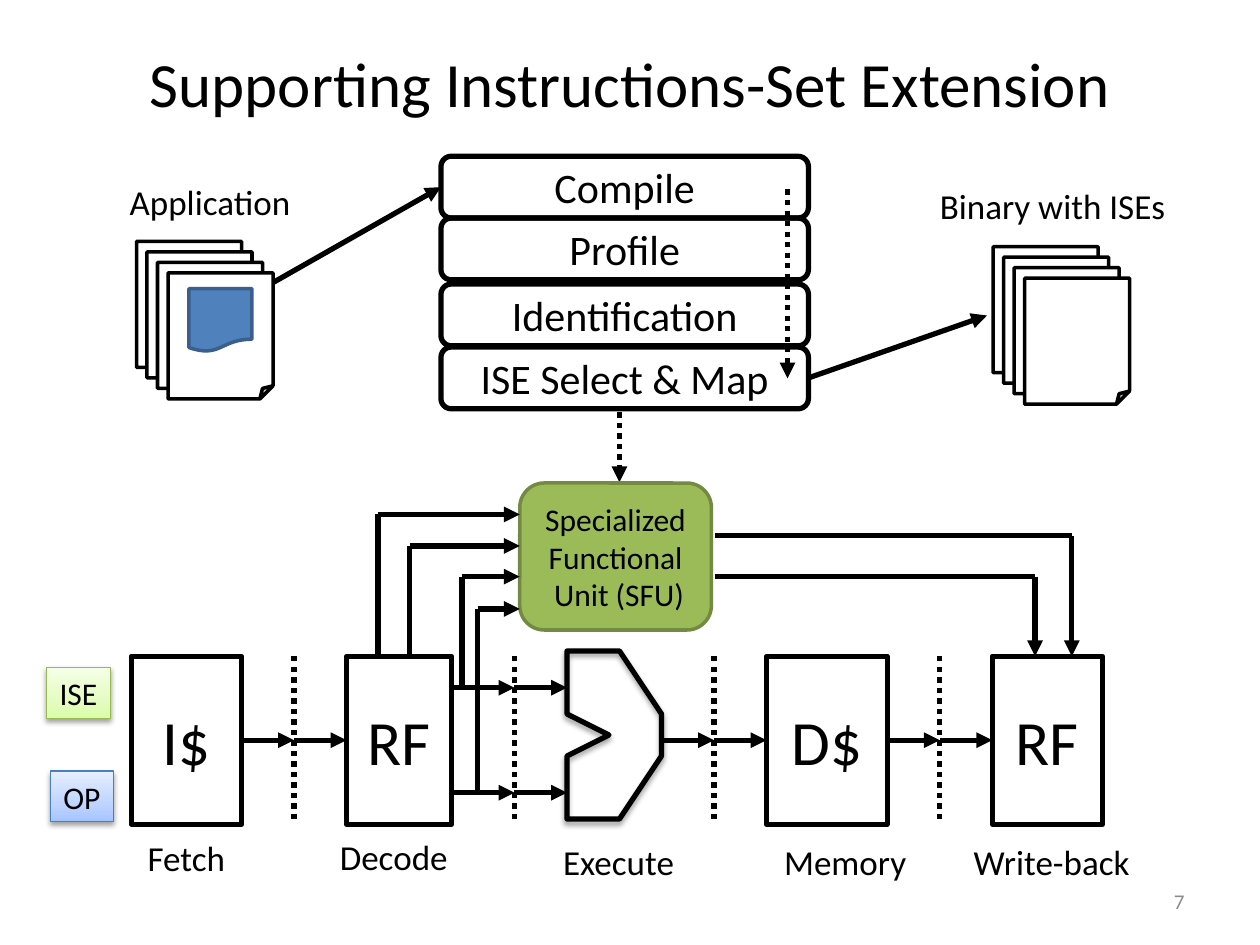
import copy

import lxml.etree
import pptx
import pptx.dml.color
import pptx.enum.dml
import pptx.enum.shapes
import pptx.enum.text
import pptx.oxml.ns
import pptx.util

Pt = pptx.util.Pt
RGBColor = pptx.dml.color.RGBColor
SHAPE = pptx.enum.shapes.MSO_SHAPE
ALIGN = pptx.enum.text.PP_ALIGN
ANCHOR = pptx.enum.text.MSO_ANCHOR
qn = pptx.oxml.ns.qn

FONT = "Calibri"
BLACK = RGBColor(0x00, 0x00, 0x00)
WHITE = RGBColor(0xFF, 0xFF, 0xFF)
GRAY = RGBColor(0x8C, 0x8C, 0x8C)
GREEN = RGBColor(0x9B, 0xBB, 0x59)
DARK_GREEN = RGBColor(0x73, 0x8A, 0x42)
BLUE = RGBColor(0x4F, 0x81, 0xBD)
DARK_BLUE = RGBColor(0x3A, 0x5F, 0x8C)
TAG_GREEN_LINE = RGBColor(0x98, 0xB9, 0x55)
TAG_GREENS = [RGBColor(0xDA, 0xFD, 0xA7), RGBColor(0xE4, 0xFC, 0xC2), RGBColor(0xF5, 0xFF, 0xE7)]
TAG_BLUE_LINE = RGBColor(0x4B, 0x7E, 0xBC)
TAG_BLUES = [RGBColor(0xA4, 0xC4, 0xFF), RGBColor(0xBF, 0xD4, 0xFF), RGBColor(0xE6, 0xEE, 0xFF)]


def write_text(shape, text, size, color=BLACK, align=ALIGN.CENTER, anchor=ANCHOR.MIDDLE, inset=0):
    frame = shape.text_frame
    frame.text = text
    frame.word_wrap = True
    frame.vertical_anchor = anchor
    frame.margin_left = frame.margin_right = Pt(inset)
    frame.margin_top = frame.margin_bottom = Pt(3.6)
    for paragraph in frame.paragraphs:
        paragraph.alignment = align
        for run in paragraph.runs:
            run.font.name = FONT
            run.font.size = Pt(size)
            run.font.color.rgb = color


def add_label(slide, box, text, size, **style):
    label = slide.shapes.add_textbox(*map(Pt, box))
    write_text(label, text, size, **style)


def format_outline(shape, fill, line, width):
    shape.shadow.inherit = False
    if fill is None:
        shape.fill.background()
    else:
        shape.fill.solid()
        shape.fill.fore_color.rgb = fill
    shape.line.color.rgb = line
    shape.line.width = Pt(width)


def add_box(slide, kind, box, fill=None, line=BLACK, width=3):
    shape = slide.shapes.add_shape(kind, *map(Pt, box))
    format_outline(shape, fill, line, width)
    return shape


def add_line(slide, start, end, arrow=False, dotted=False, source=None, target=None):
    connector = slide.shapes.add_connector(
        pptx.enum.shapes.MSO_CONNECTOR.STRAIGHT, *map(Pt, (*start, *end)))
    if source:
        connector.begin_connect(*source)
    if target:
        connector.end_connect(*target)
    connector.line.color.rgb = BLACK
    connector.line.width = Pt(3)
    if dotted:
        connector.line.dash_style = pptx.enum.dml.MSO_LINE.ROUND_DOT
    properties = connector._element.spPr
    if arrow:
        lxml.etree.SubElement(properties.find(qn("a:ln")), qn("a:tailEnd"), type="triangle")
    lxml.etree.SubElement(properties, qn("a:effectLst"))


def add_shadow(shape):
    effects = shape._element.spPr.find(qn("a:effectLst"))
    shadow = lxml.etree.SubElement(effects, qn("a:outerShdw"), blurRad=str(Pt(3.1)),
                                   dist=str(Pt(1.8)), dir="5400000", rotWithShape="0")
    color = lxml.etree.SubElement(shadow, qn("a:srgbClr"), val=str(BLACK))
    lxml.etree.SubElement(color, qn("a:alpha"), val="36000")


def draw_title(slide, left, top, width, height):
    title = slide.shapes.title
    title.left, title.top, title.width, title.height = map(Pt, (left, top, width, height))
    write_text(title, "Supporting Instructions-Set Extension", 36)


def draw_toolchain(slide, left, top, width, height):
    steps = []
    for name, offset in (("Compile", 0), ("Profile", 35.3), ("Identification", 73), ("ISE Select & Map", 109)):
        step = add_box(slide, SHAPE.ROUNDED_RECTANGLE, (left, top + offset, width, 35.3))
        write_text(step, name, 24)
        steps.append(step)
    add_line(slide, (left - 108, top + 79), (left, top + 18), arrow=True, target=(steps[0], 1))
    add_line(slide, (left + width, top + 127), (left + width + 102, top + 91), arrow=True, source=(steps[-1], 3))
    add_line(slide, (left + 198, top + 19), (left + 198, top + 127), arrow=True, dotted=True)
    add_line(slide, (left + 102, top + height + 2), (left + 102, top + height + 42), arrow=True, dotted=True)


def draw_documents(slide, left, top, width, height, caption, caption_box, marked=False):
    step = 6
    for index in range(4):
        sheet = add_box(slide, SHAPE.FOLDED_CORNER,
                        (left + index * step, top + index * step, width - 3 * step, height - 3 * step),
                        fill=WHITE, width=2)
        adjustments = sheet._element.spPr.find(qn("a:prstGeom")).find(qn("a:avLst"))
        lxml.etree.SubElement(adjustments, qn("a:gd"), name="adj", fmla="val 12500")
    if marked:
        add_box(slide, SHAPE.FLOWCHART_DOCUMENT, (left + 30, top + 27, 36, 36), BLUE, DARK_BLUE, 2)
    add_label(slide, caption_box, caption, 20, anchor=ANCHOR.TOP)


def draw_execute_unit(slide, left, top, width, height):
    outline = [(30, 0), (width, 36), (width, 60), (30, height), (0, height), (0, 60), (24, 48), (0, 36)]
    builder = slide.shapes.build_freeform(left, top, scale=Pt(1))
    builder.add_line_segments([(left + x, top + y) for x, y in outline], close=True)
    unit = builder.convert_to_shape()
    format_outline(unit, None, BLACK, 3)
    add_shadow(unit)


def draw_pipeline(slide, left, top, width, height):
    middle = top + height / 2
    stages = []
    for name, offset, stage_width in (("I$", 0, 63), ("RF", 123, 60), ("D$", 363, 69), ("RF", width - 63, 63)):
        stage = add_box(slide, SHAPE.RECTANGLE, (left + offset, top, stage_width, height))
        write_text(stage, name, 36)
        stages.append(stage)
    fetch, decode, memory, write_back = stages
    draw_execute_unit(slide, left + 249, top - 3, 54, height)

    registers = [left + offset for offset in (93, 219, 333, 462)]
    for x in registers:
        add_line(slide, (x, top), (x, top + height), dotted=True)
    hops = [
        (left + 63, registers[0], (fetch, 3), None), (registers[0], left + 123, None, (decode, 1)),
        (left + 303, registers[2], None, None), (registers[2], left + 363, None, (memory, 1)),
        (left + 432, registers[3], (memory, 3), None), (registers[3], left + 492, None, (write_back, 1)),
    ]
    for start, end, source, target in hops:
        add_line(slide, (start, middle), (end, middle), arrow=True, source=source, target=target)
    for y in (top + 18, top + 78):
        add_line(slide, (left + 183, y), (registers[1], y), arrow=True)
        add_line(slide, (registers[1], y), (left + 249, y), arrow=True)

    captions = [("Fetch", 31.5, 99.5), ("Decode", 150, 99), ("Execute", 278.5, 101.6),
                ("Memory", 408, 101.6), ("Write-back", 526, 101.6)]
    for caption, center, offset in captions:
        add_label(slide, (left + center - 57, top + offset, 114, 31), caption, 20, anchor=ANCHOR.TOP)


def draw_functional_unit(slide, left, top, width, height):
    unit = add_box(slide, SHAPE.ROUNDED_RECTANGLE, (left, top, width, height), GREEN, DARK_GREEN, 2)
    write_text(unit, "Specialized\nFunctional\n Unit (SFU)", 18)
    for distance, row, bottom in ((81, 18, 99), (63, 36, 99), (33, 53.5, 117), (24, 72, 177)):
        x, y = left - distance, top + row
        add_line(slide, (x, y), (left, y), arrow=True)
        add_line(slide, (x, y), (x, top + bottom))
    right = left + width
    for distance, row in ((206, 30), (185, 53.5)):
        x, y = right + distance, top + row
        add_line(slide, (right + 2, y), (x, y))
        add_line(slide, (x, y), (x, top + 99), arrow=True)


def draw_tag(slide, left, top, width, height, text, colors, line):
    tag = add_box(slide, SHAPE.RECTANGLE, (left, top, width, height), WHITE, line, 0.75)
    tag.fill.gradient()
    tag.fill.gradient_angle = 90
    first = tag._element.spPr.find(qn("a:gradFill")).find(qn("a:gsLst"))[0]
    first.addnext(copy.deepcopy(first))
    for stop, color, position in zip(tag.fill.gradient_stops, colors, (0, 0.35, 1)):
        stop.color.rgb = color
        stop.position = position
    add_shadow(tag)
    write_text(tag, text, 18)
    tag.text_frame.word_wrap = False


def main():
    presentation = pptx.Presentation()
    presentation.slide_width, presentation.slide_height = Pt(720), Pt(540)
    slide = presentation.slides.add_slide(presentation.slide_layouts[5])
    draw_title(slide, 36, 21.6, 648, 50.4)
    draw_toolchain(slide, 252, 89.3, 210, 144.3)
    draw_documents(slide, 78, 138, 78, 90, "Application", (42, 99.4, 156, 31), marked=True)
    draw_documents(slide, 567.5, 141, 78, 90, "Binary with ISEs", (498, 102, 207, 31))
    draw_pipeline(slide, 75, 375, 555, 96)
    draw_functional_unit(slide, 297, 276, 109.5, 84)
    draw_tag(slide, 26.6, 381.6, 36.5, 29, "ISE", TAG_GREENS, TAG_GREEN_LINE)
    draw_tag(slide, 28.8, 440.6, 36, 29, "OP", TAG_BLUES, TAG_BLUE_LINE)
    add_label(slide, (516, 500.5, 168, 28.8), "7", 12, color=GRAY, align=ALIGN.RIGHT, inset=7.2)
    presentation.save("out.pptx")


if __name__ == "__main__":
    main()
